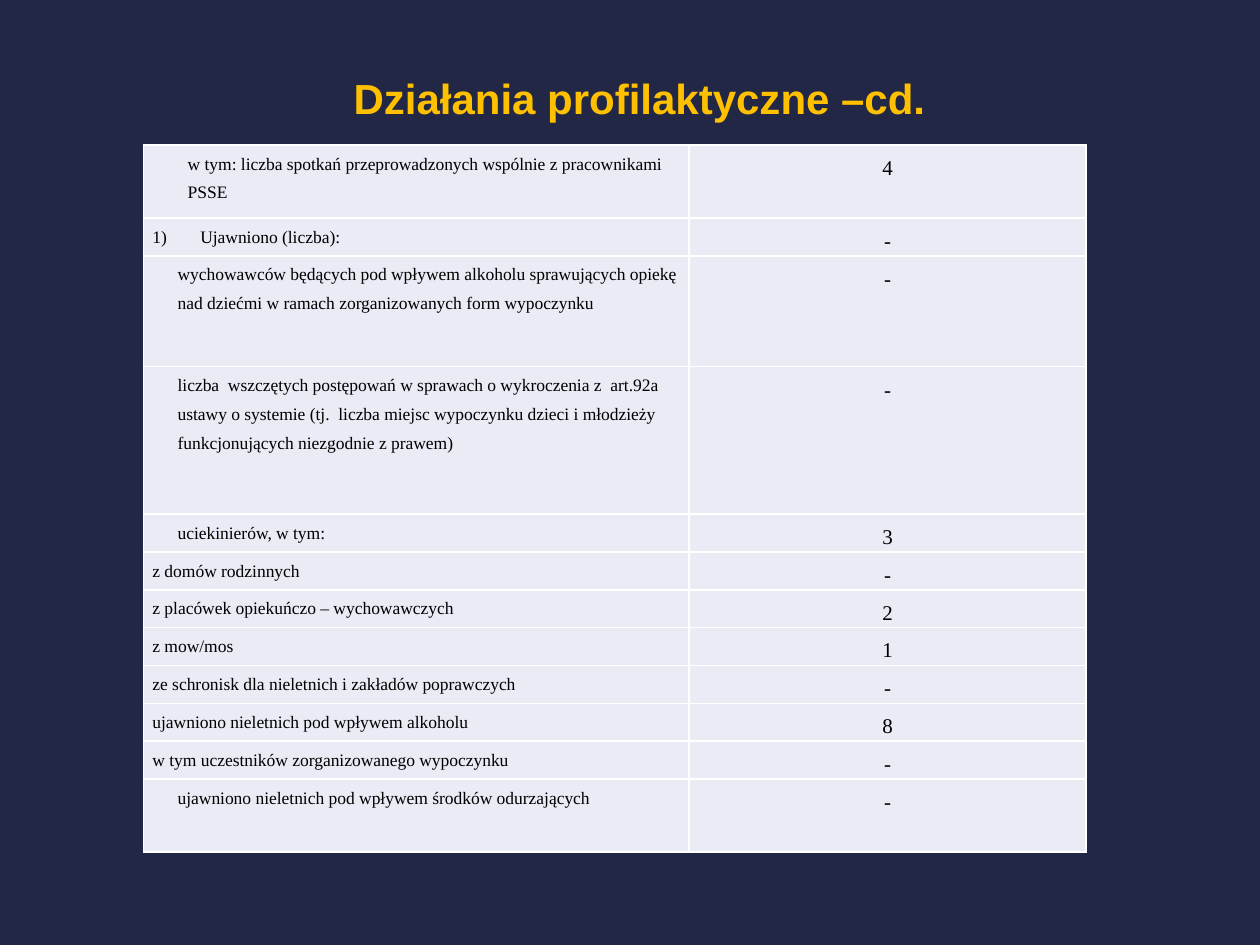
"""Build the slide listing prevention activities in a two-column table."""
import pptx
import pptx.dml.color
import pptx.enum.text
import pptx.oxml
import pptx.oxml.ns
import pptx.util

Inches = pptx.util.Inches
Pt = pptx.util.Pt
Align = pptx.enum.text.PP_ALIGN

THEME = {
    "background": "212745",
    "title": "FFC000",
    "text": "000000",
    "cell": "E9EBF5",
    "border": "FFFFFF",
    "title_size": 24,
    "label_size": 10,
    "value_size": 12,
    "title_font": "Arial",
    "table_font": "Times New Roman",
}

ROWS = [
    ("w tym: liczba spotkań przeprowadzonych wspólnie z pracownikami PSSE", "4", 0.58, 0.28),
    ("Ujawniono (liczba):", "-", 0.29, 0.38),
    ("wychowawców będących pod wpływem alkoholu sprawujących opiekę nad dziećmi "
     "w ramach zorganizowanych form wypoczynku", "-", 0.88, 0.2),
    ("liczba  wszczętych postępowań w sprawach o wykroczenia z  art.92a ustawy o systemie "
     "(tj.  liczba miejsc wypoczynku dzieci i młodzieży funkcjonujących niezgodnie z prawem)",
     "-", 1.17, 0.2),
    ("uciekinierów, w tym:", "3", 0.29, 0.2),
    ("z domów rodzinnych", "-", 0.29, 0),
    ("z placówek opiekuńczo – wychowawczych", "2", 0.29, 0),
    ("z mow/mos", "1", 0.29, 0),
    ("ze schronisk dla nieletnich i zakładów poprawczych", "-", 0.29, 0),
    ("ujawniono nieletnich pod wpływem alkoholu", "8", 0.29, 0),
    ("w tym uczestników zorganizowanego wypoczynku", "-", 0.29, 0),
    ("ujawniono nieletnich pod wpływem środków odurzających", "-", 0.58, 0.2),
]
NUMBERED_ROW = 1


def style_span(span, size, font, color, bold=False):
    span.font.size = Pt(size)
    span.font.name = font
    span.font.bold = bold
    span.font.color.rgb = pptx.dml.color.RGBColor.from_string(color)


def style_cell(cell):
    cell.margin_left = cell.margin_right = Inches(0.07)
    cell.margin_top = cell.margin_bottom = 0
    cell.fill.solid()
    cell.fill.fore_color.rgb = pptx.dml.color.RGBColor.from_string(THEME["cell"])
    properties = cell._tc.get_or_add_tcPr()
    for position, side in enumerate(("lnL", "lnR", "lnT", "lnB")):
        border = pptx.oxml.parse_xml(
            f'<a:{side} {pptx.oxml.ns.nsdecls("a")} w="{Pt(1)}"><a:solidFill>'
            f'<a:srgbClr val="{THEME["border"]}"/></a:solidFill></a:{side}>'
        )
        properties.insert(position, border)


deck = pptx.Presentation()
deck.slide_width = Inches(10)
deck.slide_height = Inches(7.5)
page = deck.slides.add_slide(deck.slide_layouts[6])
page.background.fill.solid()
page.background.fill.fore_color.rgb = pptx.dml.color.RGBColor.from_string(THEME["background"])

title_box = page.shapes.add_textbox(Inches(0.43), Inches(0.3), Inches(9.29), Inches(1.25))
title_frame = title_box.text_frame
title_frame.word_wrap = True
title_frame.vertical_anchor = pptx.enum.text.MSO_ANCHOR.MIDDLE
title_frame.margin_bottom = Inches(0.35)
title_frame.text = "Działania profilaktyczne –cd."
title_frame.paragraphs[0].alignment = Align.CENTER
style_span(title_frame.paragraphs[0].runs[0], THEME["title_size"], THEME["title_font"],
           THEME["title"], bold=True)

table_height = sum(height for _, _, height, _ in ROWS)
table = page.shapes.add_table(len(ROWS), 2, Inches(1.14), Inches(1.15),
                              Inches(7.48), Inches(table_height)).table
table.first_row = False
table.horz_banding = False
table.columns[0].width = Inches(4.33)
table.columns[1].width = Inches(3.15)

for row, (label, value, height, indent) in enumerate(ROWS):
    table.rows[row].height = Inches(height)
    columns = [(label, THEME["label_size"], Align.LEFT), (value, THEME["value_size"], Align.CENTER)]
    for column, (text, size, alignment) in enumerate(columns):
        cell = table.cell(row, column)
        style_cell(cell)
        cell.text_frame.text = text
        para = cell.text_frame.paragraphs[0]
        para.alignment = alignment
        para.line_spacing = 1.5
        para.space_before = Pt(6)
        style_span(para.runs[0], size, THEME["table_font"], THEME["text"])
    label_para = table.cell(row, 0).text_frame.paragraphs[0]
    label_properties = label_para._p.get_or_add_pPr()
    label_properties.set("marL", str(Inches(indent)))
    if row == NUMBERED_ROW:
        label_para.alignment = Align.JUSTIFY
        label_properties.set("indent", str(-Inches(indent)))
        label_properties.append(pptx.oxml.parse_xml(
            f'<a:buAutoNum {pptx.oxml.ns.nsdecls("a")} type="arabicParenR"/>'))

deck.save("out.pptx")
